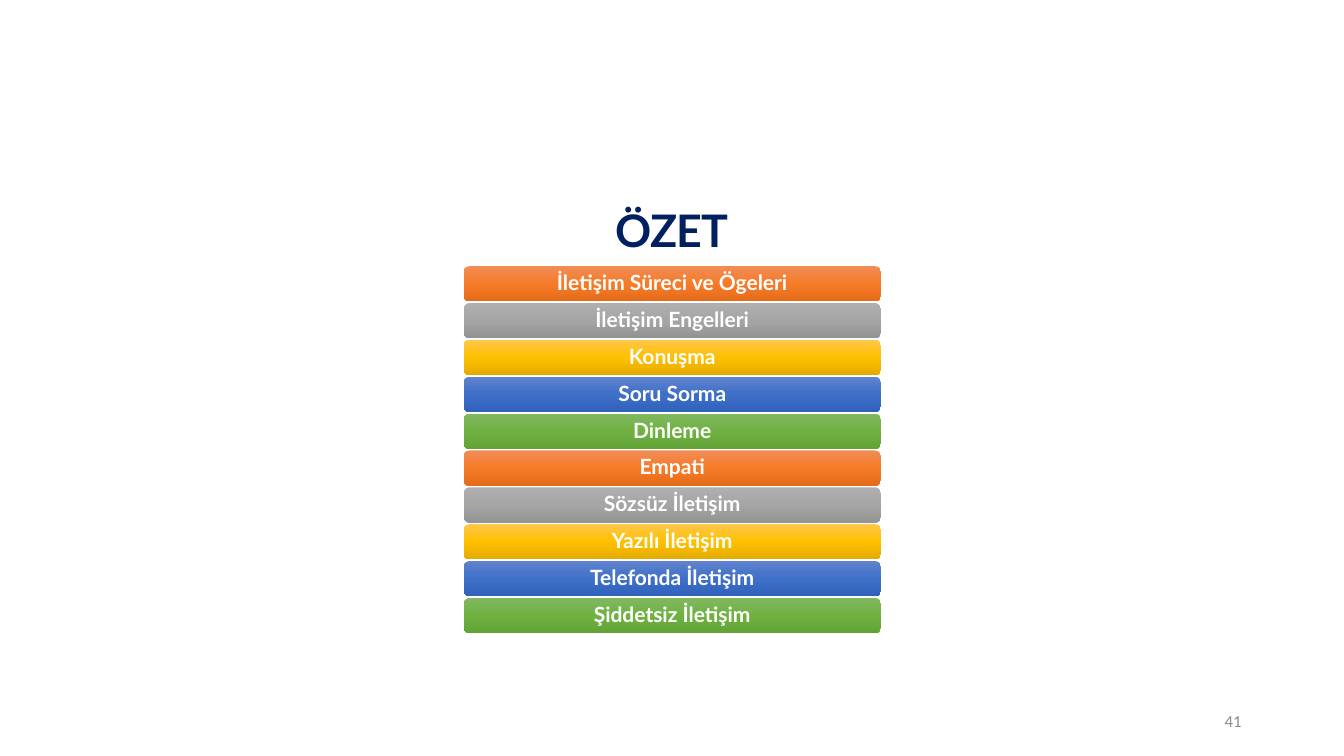
from copy import deepcopy

from pptx import Presentation
from pptx.dml.color import RGBColor
from pptx.enum.shapes import MSO_SHAPE as Shape
from pptx.enum.text import MSO_ANCHOR as Anchor, PP_ALIGN as Align
from pptx.oxml.ns import qn
from pptx.util import Pt

NAVY = RGBColor(0x00, 0x20, 0x60)
WHITE = RGBColor(0xFF, 0xFF, 0xFF)
GREY = RGBColor(0x8C, 0x8C, 0x8C)

# Top, middle and bottom colour of each bar, used in turn
ORANGE_BAR = (RGBColor(0xF1, 0x8C, 0x57), RGBColor(0xF6, 0x7B, 0x28), RGBColor(0xE5, 0x6C, 0x19))
GREY_BAR = (RGBColor(0xAF, 0xAF, 0xAF), RGBColor(0xA5, 0xA5, 0xA5), RGBColor(0x93, 0x93, 0x93))
YELLOW_BAR = (RGBColor(0xFF, 0xC6, 0x4B), RGBColor(0xFF, 0xC0, 0x00), RGBColor(0xE3, 0xAB, 0x00))
BLUE_BAR = (RGBColor(0x61, 0x83, 0xCB), RGBColor(0x3E, 0x70, 0xCA), RGBColor(0x30, 0x62, 0xBB))
GREEN_BAR = (RGBColor(0x81, 0xB8, 0x61), RGBColor(0x6F, 0xB2, 0x42), RGBColor(0x62, 0xA3, 0x36))
BAR_COLOURS = (ORANGE_BAR, GREY_BAR, YELLOW_BAR, BLUE_BAR, GREEN_BAR)

TOPICS = (
    "İletişim Süreci ve Ögeleri",
    "İletişim Engelleri",
    "Konuşma",
    "Soru Sorma",
    "Dinleme",
    "Empati",
    "Sözsüz İletişim",
    "Yazılı İletişim",
    "Telefonda İletişim",
    "Şiddetsiz İletişim",
)
BAR_LEFT, BAR_TOP, BAR_WIDTH, BAR_HEIGHT = 331.2, 190.1, 298.1, 25.2
BAR_PITCH = 26.33


def write_line(shape, text, size, colour, align, font="Lato", bold=True, spacing=0.9):
    """Put one line of text, vertically centred, into a shape."""
    frame = shape.text_frame
    frame.word_wrap = True
    frame.vertical_anchor = Anchor.MIDDLE
    para = frame.paragraphs[0]
    para.alignment = align
    para.line_spacing = spacing
    span = para.add_run()
    span.text = text
    span.font.name = font
    span.font.size = Pt(size)
    span.font.bold = bold
    span.font.color.rgb = colour
    return span


def add_label(page, left, top, width, height, text, size, colour, align, **style):
    box = page.shapes.add_textbox(Pt(left), Pt(top), Pt(width), Pt(height))
    return write_line(box, text, size, colour, align, **style)


def fill_downwards(shape, colours):
    """Fill a shape with a three-colour gradient from top to bottom."""
    shape.fill.gradient()
    shape.fill.gradient_angle = 270
    stop_list = shape._element.spPr.find(qn("a:gradFill")).find(qn("a:gsLst"))
    stop_list.insert(1, deepcopy(stop_list[0]))
    for stop, position, colour in zip(shape.fill.gradient_stops, (0, 0.5, 1), colours):
        stop.position = position
        stop.color.rgb = colour


def add_bar(page, top, topic, colours):
    bar = page.shapes.add_shape(
        Shape.ROUNDED_RECTANGLE, Pt(BAR_LEFT), Pt(top), Pt(BAR_WIDTH), Pt(BAR_HEIGHT))
    bar.shadow.inherit = False
    bar.line.fill.background()
    fill_downwards(bar, colours)
    frame = bar.text_frame
    frame.margin_left = frame.margin_right = Pt(4.5)
    frame.margin_top = frame.margin_bottom = Pt(2.25)
    write_line(bar, topic, 15, WHITE, Align.CENTER)


def main():
    deck = Presentation()
    deck.slide_width, deck.slide_height = Pt(960), Pt(540)
    page = deck.slides.add_slide(deck.slide_layouts[6])

    # Title, slightly tightened
    title = add_label(page, 66, 114.5, 828, 104.4, "ÖZET", 32, NAVY, Align.CENTER)
    title.font._element.set("spc", "-50")

    # Stack of topics
    for index, topic in enumerate(TOPICS):
        colours = BAR_COLOURS[index % len(BAR_COLOURS)]
        add_bar(page, BAR_TOP + index * BAR_PITCH, topic, colours)

    # Page number
    add_label(page, 678, 500.5, 216, 28.75, "41", 12, GREY, Align.RIGHT,
              font="Calibri", bold=False, spacing=1.0)

    deck.save("out.pptx")


if __name__ == "__main__":
    main()
